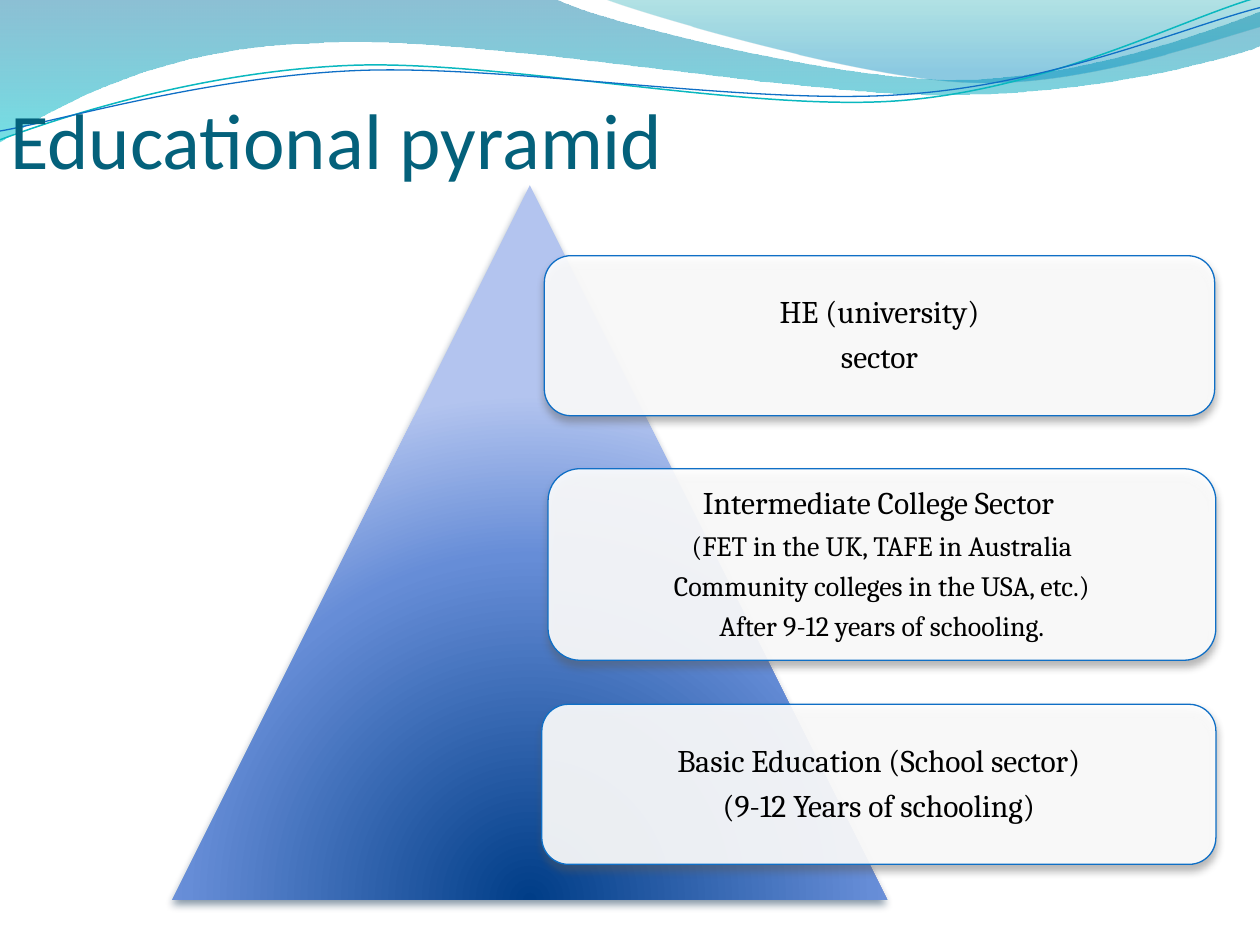
from math import cos, radians, sin

from lxml.etree import SubElement
from pptx import Presentation
from pptx.dml.color import RGBColor
from pptx.enum.shapes import MSO_SHAPE as SHAPE
from pptx.enum.text import MSO_ANCHOR as ANCHOR, PP_ALIGN as ALIGN
from pptx.oxml.ns import qn
from pptx.util import Inches, Pt

WHITE = RGBColor(0xFF, 0xFF, 0xFF)
BLACK = RGBColor(0x00, 0x00, 0x00)
TITLE = RGBColor(0x04, 0x61, 0x7B)
BLUE = RGBColor(0x0F, 0x6F, 0xC6)
TEAL = RGBColor(0x0A, 0xB8, 0xBF)
DEEP_BLUE = RGBColor(0x00, 0x74, 0xA1)
AQUA = RGBColor(0x00, 0xC6, 0xCF)
SEA = RGBColor(0x00, 0xA1, 0xA9)
SKY = RGBColor(0x00, 0x8B, 0xBF)
NAVY = RGBColor(0x00, 0x3D, 0x87)
MID_BLUE = RGBColor(0x66, 0x8D, 0xD7)
PALE_BLUE = RGBColor(0xB3, 0xC4, 0xEF)
NAVY_SHADOW = RGBColor(0x04, 0x27, 0x47)
GREY_SHADOW = RGBColor(0x5A, 0x5A, 0x5A)

SLIDE_W, SLIDE_H = 10, 7.5
RIPPLE_TILT = -2.7

WAVES = [
    ((-0.01, -0.01, 10.02, 1.14),
     [(0, 0), (4.4, -0.01),
      (4.76, 0.17, 6.64, 0.63, 7.58, 0.63), (8.53, 0.63, 9.58, 0.26, 10, 0.09),
      (10.01, 0.36),
      (9.83, 0.44, 8.7, 0.76, 7.46, 0.75), (6.22, 0.75, 3.82, 0.28, 2.57, 0.34),
      (1.29, 0.36, 0.46, 0.83, -0.01, 1.13), (0, 0)],
     [(0, DEEP_BLUE, 45), (100, AQUA, 55)]),
    ((4.79, -0.01, 5.21, 0.7),
     [(4.79, -0.01),
      (5.09, 0.11, 6.82, 0.62, 7.69, 0.65), (8.56, 0.69, 9.61, 0.32, 10, 0.21),
      (10, 0), (4.79, -0.01)],
     [(0, SEA, 30), (80, SKY, 45)]),
]
RIPPLES = [
    ((-0.02, 0.22, 10.02, 0.71),
     [(0, 1.11), (0.48, 0.93, 1.58, 0.57, 2.77, 0.52),
      (3.95, 0.47, 5.93, 0.89, 7.13, 0.8), (8.33, 0.71, 9.38, 0.15, 9.98, -0.02)],
     TEAL, 0.85),
    ((-0.02, 0.3, 10.03, 0.58),
     [(0, 1.04), (0.47, 0.96, 1.64, 0.61, 2.83, 0.56),
      (4.03, 0.51, 5.97, 0.84, 7.17, 0.75), (8.36, 0.67, 9.41, 0.21, 10, 0.06)],
     BLUE, 0.75),
]
PYRAMID = (1.37, 1.47, 5.67, 5.67)
PYRAMID_STOPS = [(0, NAVY, 100), (68, MID_BLUE, 100), (100, PALE_BLUE, 100)]
PYRAMID_FOCUS = {"l": 50, "t": 130, "r": 50, "b": -30}
SECTORS = [
    ((4.32, 2.03, 5.32, 1.27), [("HE (university)", 18), ("sector", 18)]),
    ((4.35, 3.72, 5.3, 1.52),
     [("Intermediate College Sector ", 18),
      ("(FET in the UK, TAFE in Australia", 16),
      ("Community colleges in the USA, etc.)", 16),
      ("After 9-12 years of schooling.", 16)]),
    ((4.3, 5.59, 5.35, 1.27),
     [("Basic Education (School sector)", 18), ("(9-12 Years of schooling)", 18)]),
]


def add(parent, tag, **attrs):
    return SubElement(parent, qn(tag), {k: str(v) for k, v in attrs.items()})


def percent(value):
    return round(value * 1000)


def add_color(parent, color, opacity):
    clr = add(parent, "a:srgbClr", val=color)
    if opacity < 100:
        add(clr, "a:alpha", val=percent(opacity))


def set_gradient(sp, stops, focus=None):
    sp.fill.background()
    props = sp._element.spPr
    none = props.find(qn("a:noFill"))
    grad = add(props, "a:gradFill", rotWithShape=1)
    props.replace(none, grad)
    gs_list = add(grad, "a:gsLst")
    for pos, color, opacity in stops:
        add_color(add(gs_list, "a:gs", pos=percent(pos)), color, opacity)
    if focus:
        circle = add(grad, "a:path", path="circle")
        add(circle, "a:fillToRect", **{k: percent(v) for k, v in focus.items()})
    else:
        add(grad, "a:lin", ang=90 * 60000, scaled=1)


def set_shadow(sp, color):
    sp.shadow.inherit = False
    effects = sp._element.spPr.find(qn("a:effectLst"))
    shadow = add(effects, "a:outerShdw", blurRad=Pt(4.5), dist=Pt(3),
                 dir=90 * 60000, algn="ctr", rotWithShape=0)
    add_color(shadow, color, 48)


def add_curve(shapes, box, steps, close, tilt=0):
    left, top, width, height = box
    c, s = cos(radians(-tilt)), sin(radians(-tilt))

    def local(x, y):
        dx, dy = x - left - width / 2, y - top - height / 2
        return Inches(dx * c - dy * s + width / 2), Inches(dx * s + dy * c + height / 2)

    start, *ends = [local(*step[-2:]) for step in steps]
    builder = shapes.build_freeform(*start, scale=1.0)
    builder.add_line_segments(ends, close=close)
    sp = builder.convert_to_shape()
    sp.left, sp.top, sp.width, sp.height = map(Inches, box)
    sp.rotation = tilt
    sp.shadow.inherit = False

    outline = next(sp._element.iter(qn("a:path")))
    outline.set("w", str(Inches(width)))
    outline.set("h", str(Inches(height)))
    for segment, step in zip(list(outline), steps):
        kind = "a:cubicBezTo" if len(step) == 6 else segment.tag
        new = add(outline, kind) if len(step) == 6 else segment
        for pt in list(new):
            new.remove(pt)
        for x, y in zip(step[::2], step[1::2]):
            px, py = local(x, y)
            add(new, "a:pt", x=px, y=py)
        if new is not segment:
            outline.replace(segment, new)
    return sp


def add_text(shapes, box, anchor, insets, lines, font, color):
    tf = shapes.add_textbox(*map(Inches, box)).text_frame
    tf.word_wrap = True
    tf.vertical_anchor = anchor
    (tf.margin_left, tf.margin_top,
     tf.margin_right, tf.margin_bottom) = map(Inches, insets)
    for i, (text, size) in enumerate(lines):
        p = tf.add_paragraph() if i else tf.paragraphs[0]
        r = p.add_run()
        r.text = text
        r.font.size, r.font.name = Pt(size), font
        r.font.color.rgb = color
    return tf


def add_sector(shapes, box, lines):
    sp = shapes.add_shape(SHAPE.ROUNDED_RECTANGLE, *map(Inches, box))
    sp.fill.solid()
    sp.fill.fore_color.rgb = WHITE
    clr = sp._element.spPr.find(qn("a:solidFill")).find(qn("a:srgbClr"))
    add(clr, "a:alpha", val=percent(90))
    sp.line.color.rgb, sp.line.width = BLUE, Pt(0.75)
    set_shadow(sp, GREY_SHADOW)
    tf = add_text(shapes, box, ANCHOR.MIDDLE, [0.07] * 4, lines, "Cambria", BLACK)
    for p in tf.paragraphs:
        p.alignment, p.line_spacing = ALIGN.CENTER, 0.9
        after = add(p._p.get_or_add_pPr(), "a:spcAft")
        add(after, "a:spcPct", val=percent(35))


def main():
    prs = Presentation()
    prs.slide_width, prs.slide_height = Inches(SLIDE_W), Inches(SLIDE_H)
    shapes = prs.slides.add_slide(prs.slide_layouts[6]).shapes

    for box, steps, stops in WAVES:
        sp = add_curve(shapes, box, steps, True)
        set_gradient(sp, stops)
        sp.line.fill.background()
    for box, steps, color, width in RIPPLES:
        sp = add_curve(shapes, box, steps, False, RIPPLE_TILT)
        sp.fill.background()
        sp.line.color.rgb, sp.line.width = color, Pt(width)

    add_text(shapes, (0.08, 0.77, 5.79, 0.7), ANCHOR.BOTTOM, (0, 0.05, 0, 0),
             [("Educational pyramid", 45)], "Calibri", TITLE)

    pyramid = shapes.add_shape(SHAPE.ISOSCELES_TRIANGLE, *map(Inches, PYRAMID))
    set_gradient(pyramid, PYRAMID_STOPS, PYRAMID_FOCUS)
    pyramid.line.fill.background()
    set_shadow(pyramid, NAVY_SHADOW)
    for box, lines in SECTORS:
        add_sector(shapes, box, lines)

    prs.save("out.pptx")


if __name__ == "__main__":
    main()
